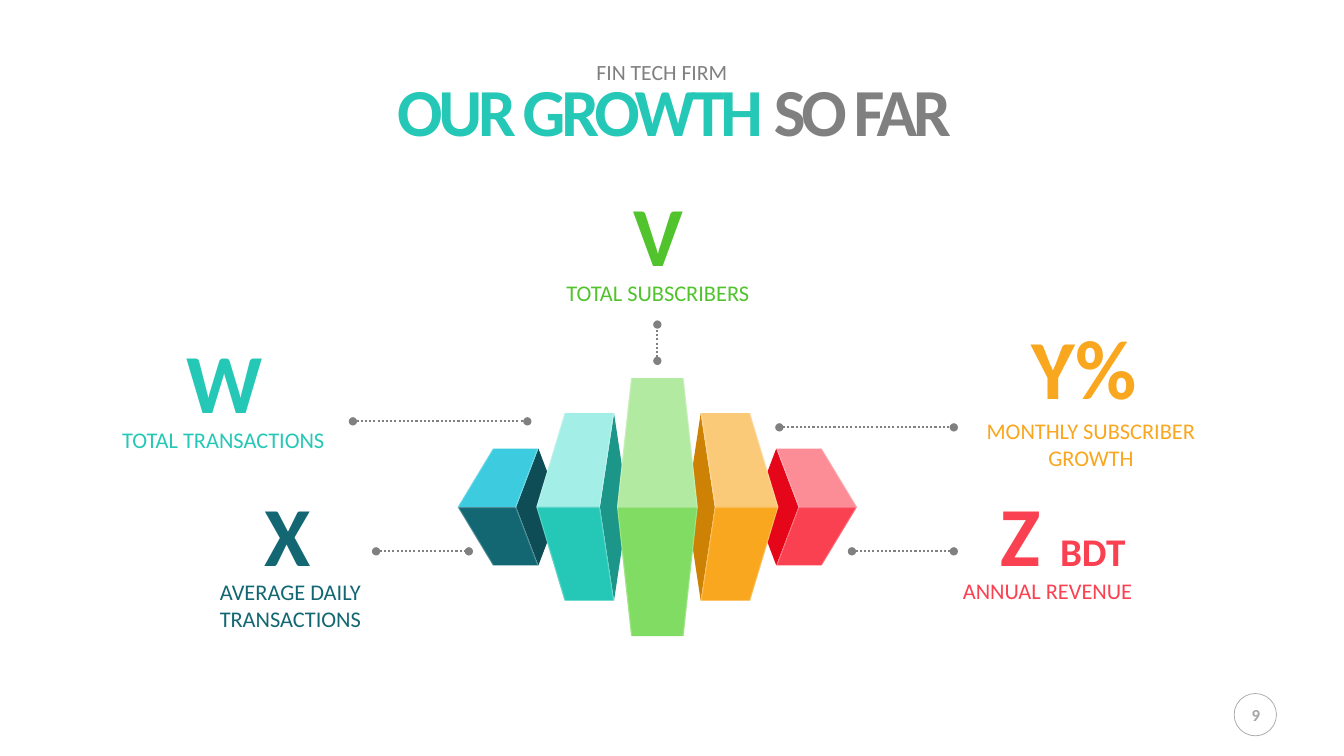
"""Build the growth slide: five faceted blocks with linked key figures."""
import lxml.etree
import pptx
import pptx.dml.color
import pptx.enum.dml
import pptx.enum.shapes
import pptx.enum.text
import pptx.oxml.ns
import pptx.util

Inches = pptx.util.Inches
Pt = pptx.util.Pt
qn = pptx.oxml.ns.qn

THEME = {
    "font": "Calibri", "gray": "808080", "pale": "A6A6A6", "white": "FFFFFF",
    "teal": "25C8B6", "petrol": "136772", "orange": "F9A71F", "red": "FA4151", "green": "51C32C",
    "title": 48, "kicker": 15.5, "figure": 60, "unit": 28, "caption": 16, "number": 12,
}

FIGURES = [
    ([("W", "figure")], (1.4, 3.22, 1.65, 0.88), "TOTAL TRANSACTIONS", (1.06, 4.18, 2.31, 0.37), "teal"),
    ([("X", "figure")], (2.02, 4.74, 1.67, 1.16), "AVERAGE DAILY TRANSACTIONS", (1.79, 5.69, 2.18, 0.64), "petrol"),
    ([("Y%", "figure")], (9.76, 3.08, 1.99, 1.12), "MONTHLY SUBSCRIBER GROWTH", (9.68, 4.09, 2.28, 0.64), "orange"),
    ([("Z ", "figure"), ("BDT", "unit")], (9.55, 4.74, 1.99, 1.12), "ANNUAL REVENUE", (9.27, 5.68, 2.24, 0.37), "red"),
    ([("V", "figure")], (5.53, 1.76, 1.99, 1.12), "TOTAL SUBSCRIBERS", (4.77, 2.72, 3.51, 0.37), "green"),
]

LINKS = [
    (3.73, 5.47, 4.65, 5.47), (3.5, 4.18, 5.23, 4.18), (8.45, 5.47, 9.46, 5.47),
    (7.73, 4.24, 9.46, 4.24), (6.52, 3.58, 6.52, 3.22),
]

CENTER_X, CENTER_Y = 6.52, 5.03
OUTER = {"far": 0.96, "ridge": 1.18, "near": 1.4, "corner": 1.63, "tip": 1.98, "half": 0.58}
INNER = {"far": 0.29, "ridge": 0.43, "near": 0.57, "corner": 0.92, "tip": 1.2, "half": 0.93}
MIDDLE = {"corner": 0.26, "tip": 0.4, "half": 1.28}
SIDE_BLOCKS = [
    (-1, OUTER, "0E4D56", "3DCCDF", "136772"),
    (-1, INNER, "1C9689", "A3EEE6", "25C8B6"),
    (1, OUTER, "E60619", "FC8D97", "FA4151"),
    (1, INNER, "CD8205", "FBCA79", "F9A71F"),
]
MIDDLE_TOP, MIDDLE_BOTTOM = "B3EAA1", "81DC63"
GLINT = 0.01
GLINT_OPACITY = 25

deck = pptx.Presentation()
deck.slide_width, deck.slide_height = Inches(13.33), Inches(7.5)
page = deck.slides.add_slide(deck.slide_layouts[6])


def rgb(value):
    return pptx.dml.color.RGBColor.from_string(THEME.get(value, value))


def add_text(place, runs, bold=False, margins=(0.1, 0.05), wrap=True, line_spacing=None, tracking=None):
    """Add centred text; each run is (wording, size name, colour name)."""
    box = page.shapes.add_textbox(*map(Inches, place))
    frame = box.text_frame
    frame.word_wrap = wrap
    frame.margin_left = frame.margin_right = Inches(margins[0])
    frame.margin_top = frame.margin_bottom = Inches(margins[1])
    para = frame.paragraphs[0]
    para.alignment = pptx.enum.text.PP_ALIGN.CENTER
    if line_spacing:
        para.line_spacing = line_spacing
    for wording, size, color in runs:
        span = para.add_run()
        span.text = wording
        span.font.name = THEME["font"]
        span.font.size = Pt(THEME[size])
        span.font.bold = bold
        span.font.color.rgb = rgb(color)
        if tracking:
            span.font._element.set("spc", str(tracking * 100))


def add_link(ends):
    """Add a dotted line with a round dot at each end."""
    link = page.shapes.add_connector(pptx.enum.shapes.MSO_CONNECTOR.STRAIGHT, *map(Inches, ends))
    link.line.color.rgb = rgb("gray")
    link.line.width = Pt(1.5)
    link.line.dash_style = pptx.enum.dml.MSO_LINE.ROUND_DOT
    outline = link.line._get_or_add_ln()
    for end in ("a:headEnd", "a:tailEnd"):
        lxml.etree.SubElement(outline, qn(end), type="oval")
    lxml.etree.SubElement(link._element.spPr, qn("a:effectLst"))


def add_facet(side, points, color, opacity=None):
    """Add a polygon from (distance from the axis, height offset) pairs."""
    spots = [(Inches(CENTER_X + side * x), Inches(CENTER_Y + y)) for x, y in points]
    builder = page.shapes.build_freeform(*spots[0], scale=1.0)
    builder.add_line_segments(spots[1:], close=True)
    facet = builder.convert_to_shape()
    facet.shadow.inherit = False
    facet.fill.solid()
    facet.fill.fore_color.rgb = rgb(color)
    facet.line.fill.background()
    if opacity:
        tint = facet._element.spPr.find(qn("a:solidFill"))[0]
        lxml.etree.SubElement(tint, qn("a:alpha"), val=str(opacity * 1000))


def add_glint(side, points):
    add_facet(side, points, "white", GLINT_OPACITY)


def add_edge_glint(side, end, bend, half, shift):
    """Add a thin chevron along a bent edge."""
    edge = [(end, -half), (bend, 0), (end, half)]
    add_glint(side, edge + [(x + shift, y) for x, y in reversed(edge)])


def add_band(start, stop, side):
    add_glint(side, [(start, 0), (stop, 0), (stop, GLINT), (start, GLINT)])


add_text((12.25, 6.94, 0.41, 0.3), [("9", "number", "pale")], bold=True, wrap=False)
ring = page.shapes.add_shape(pptx.enum.shapes.MSO_SHAPE.OVAL, *map(Inches, (12.24, 6.88, 0.42, 0.42)))
ring.shadow.inherit = False
ring.fill.background()
ring.line.color.rgb = rgb("pale")
ring.line.width = Pt(0.5)

add_text((2.05, 0.67, 9.27, 0.86), [("OUR GROWTH ", "title", "teal"), ("SO FAR", "title", "gray")],
         bold=True, margins=(0.05, 0.02), tracking=-3)
add_text((3.38, 0.47, 6.37, 0.46), [("FIN TECH FIRM", "kicker", "gray")],
         margins=(0.12, 0.06), line_spacing=1.2)

for ends in LINKS:
    add_link(ends)

for side, block, shade, top, bottom in SIDE_BLOCKS:
    half = block["half"]
    add_facet(side, [(block["near"], 0), (block["ridge"], -half), (block["far"], 0), (block["ridge"], half)], shade)
    for height, color in ((-half, top), (half, bottom)):
        add_facet(side, [(block["near"], 0), (block["ridge"], height),
                         (block["corner"], height), (block["tip"], 0)], color)

for height, color in ((-MIDDLE["half"], MIDDLE_TOP), (MIDDLE["half"], MIDDLE_BOTTOM)):
    add_facet(1, [(-MIDDLE["tip"], 0), (-MIDDLE["corner"], height),
                  (MIDDLE["corner"], height), (MIDDLE["tip"], 0)], color)

add_band(-MIDDLE["tip"], MIDDLE["tip"], 1)
for side, block, *colors in SIDE_BLOCKS:
    add_band(block["near"], block["tip"], side)
    add_edge_glint(side, block["ridge"], block["near"], block["half"], GLINT)
for side in (-1, 1):
    for block in (OUTER, INNER, MIDDLE):
        add_edge_glint(side, block["corner"], block["tip"], block["half"], -GLINT)

for figure, figure_place, caption, caption_place, color in FIGURES:
    add_text(figure_place, [(wording, size, color) for wording, size in figure], bold=True)
    add_text(caption_place, [(caption, "caption", color)])

deck.save("out.pptx")
